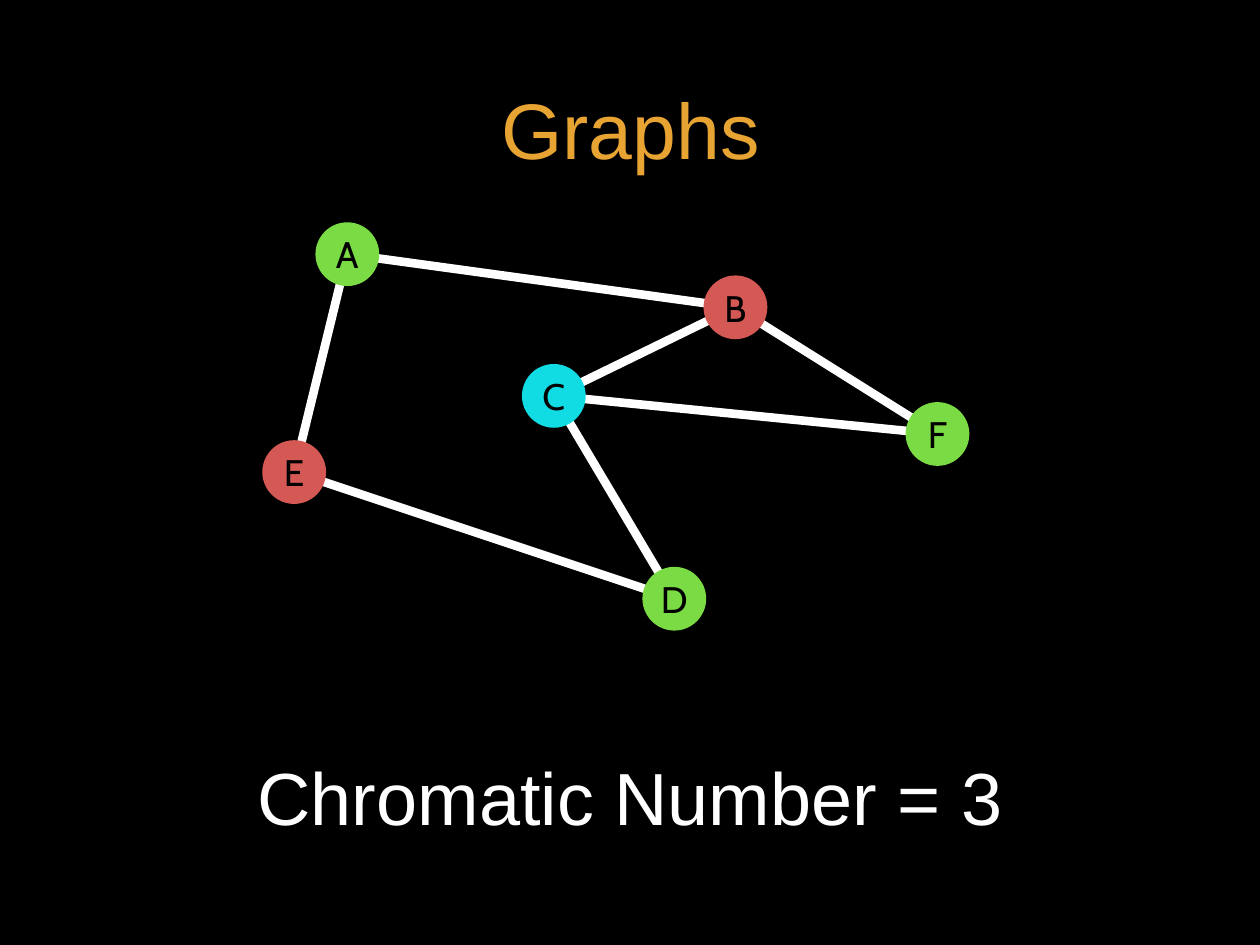
"""Build the Graphs slide: a three-coloured graph and its chromatic number."""
from math import hypot

from pptx import Presentation
from pptx.dml.color import RGBColor
from pptx.enum.shapes import MSO_CONNECTOR, MSO_SHAPE
from pptx.enum.text import MSO_ANCHOR, PP_ALIGN
from pptx.oxml.ns import qn
from pptx.util import Inches, Pt
from lxml.etree import SubElement

BLACK = RGBColor(0x00, 0x00, 0x00)
WHITE = RGBColor(0xFF, 0xFF, 0xFF)
ORANGE = RGBColor(0xE8, 0xA4, 0x33)
GREEN = RGBColor(0x7B, 0xDB, 0x45)
RED = RGBColor(0xD4, 0x59, 0x54)
CYAN = RGBColor(0x11, 0xDB, 0xE3)

TITLE = "Graphs"
CONCLUSION = "Chromatic Number = 3"
NODES = {
    "A": (3.92, 2.87, GREEN),
    "F": (10.58, 4.9, GREEN),
    "E": (3.32, 5.33, RED),
    "D": (7.61, 6.76, GREEN),
    "C": (6.25, 4.47, CYAN),
    "B": (8.3, 3.47, RED),
}
EDGES = ["AE", "BC", "DE", "FC", "CD", "BA", "FB"]
DIAMETER = 0.72
EDGE_GAP = 0.35


def write(frame, text, font, size, color):
    frame.margin_left = frame.margin_right = 0
    frame.margin_top = frame.margin_bottom = 0
    frame.vertical_anchor = MSO_ANCHOR.MIDDLE
    paragraph = frame.paragraphs[0]
    paragraph.alignment = PP_ALIGN.CENTER
    run = paragraph.add_run()
    run.text = text
    run.font.name = font
    run.font.size = Pt(size)
    run.font.color.rgb = color


def add_label(slide, box, text, size, color):
    label = slide.shapes.add_textbox(*map(Inches, box))
    label.text_frame.word_wrap = True
    write(label.text_frame, text, "Arial", size, color)


def add_edge(slide, start, end):
    (x1, y1, _), (x2, y2, _) = NODES[start], NODES[end]
    length = hypot(x2 - x1, y2 - y1)
    dx = (x2 - x1) / length * EDGE_GAP
    dy = (y2 - y1) / length * EDGE_GAP
    ends = (x1 + dx, y1 + dy, x2 - dx, y2 - dy)
    edge = slide.shapes.add_connector(MSO_CONNECTOR.STRAIGHT, *map(Inches, ends))
    edge.line.color.rgb = WHITE
    edge.line.width = Pt(7)
    SubElement(edge._element.spPr, qn("a:effectLst"))


def add_node(slide, letter, x, y, color):
    box = (x - DIAMETER / 2, y - DIAMETER / 2, DIAMETER, DIAMETER)
    node = slide.shapes.add_shape(MSO_SHAPE.OVAL, *map(Inches, box))
    node.shadow.inherit = False
    node.fill.solid()
    node.fill.fore_color.rgb = color
    node.line.fill.background()
    write(node.text_frame, letter, "Cabin", 30, BLACK)


def main():
    prs = Presentation()
    prs.slide_width, prs.slide_height = Inches(14.22), Inches(10.67)
    slide = prs.slides.add_slide(prs.slide_layouts[6])
    slide.background.fill.solid()
    slide.background.fill.fore_color.rgb = BLACK

    add_label(slide, (1.39, 8.06, 11.44, 1.86), CONCLUSION, 60, WHITE)
    for start, end in EDGES:
        add_edge(slide, start, end)
    add_label(slide, (5.57, 0.86, 3.09, 1.18), TITLE, 64, ORANGE)
    for letter, (x, y, color) in NODES.items():
        add_node(slide, letter, x, y, color)

    prs.save("out.pptx")


if __name__ == "__main__":
    main()
